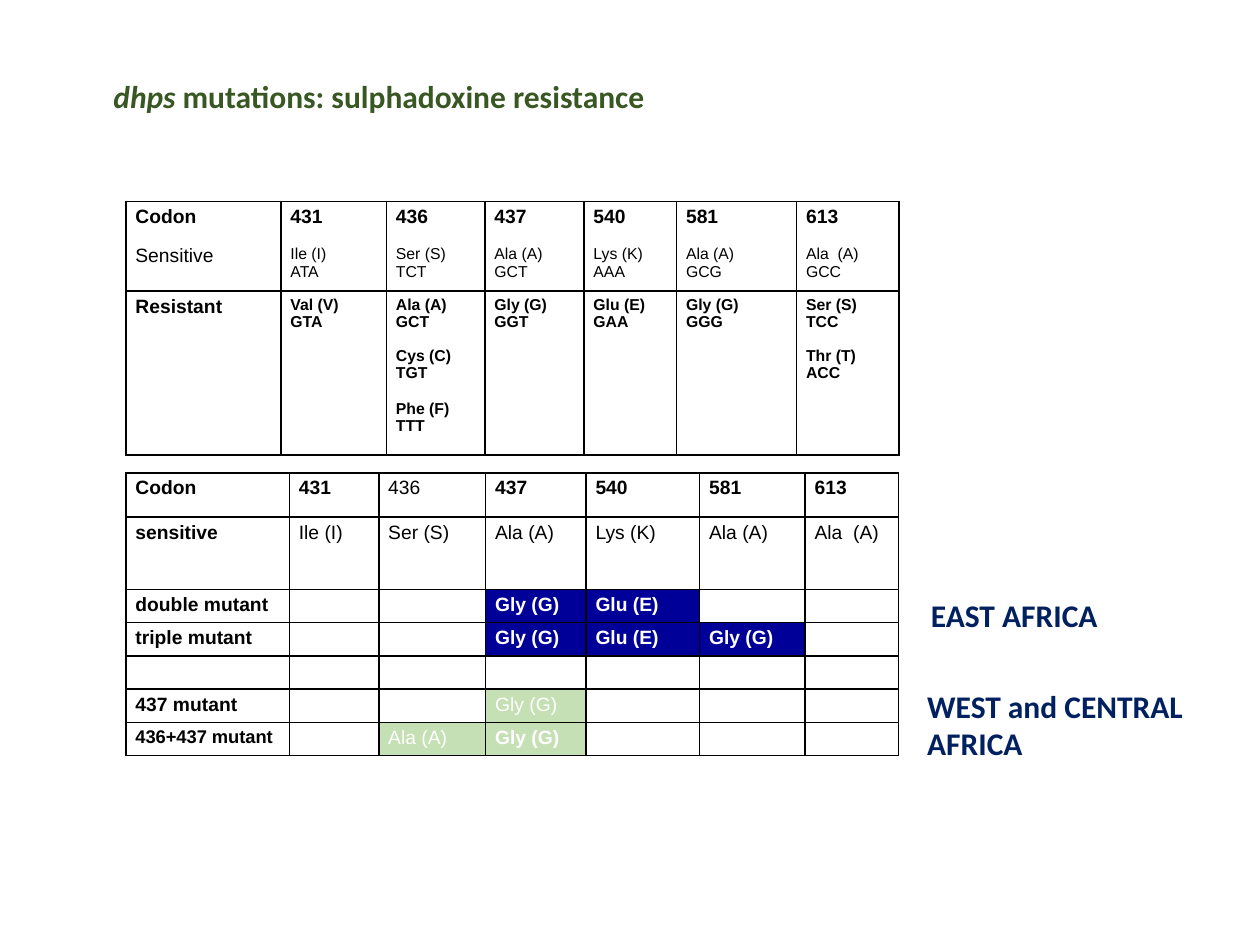
from dataclasses import dataclass

from lxml import etree
from pptx import Presentation
from pptx.dml.color import RGBColor
from pptx.enum.text import MSO_ANCHOR, MSO_AUTO_SIZE, PP_ALIGN
from pptx.oxml.ns import qn
from pptx.util import Pt

TOP = MSO_ANCHOR.TOP
LEFT = PP_ALIGN.LEFT
NO_FIT = MSO_AUTO_SIZE.NONE
TITLE_ONLY = 5


@dataclass(frozen=True)
class Theme:
    heading_font: str = "Calibri"
    table_font: str = "Arial"
    heading_size: float = 18
    table_size: float = 11
    narrow_size: float = 10.5
    codon_size: float = 9
    black: str = "000000"
    white: str = "FFFFFF"
    title: str = "385723"
    region: str = "002060"
    east: str = "000099"
    west: str = "C5E0B4"


THEME = Theme()


@dataclass(frozen=True)
class Line:
    text: str
    size: float = THEME.table_size
    bold: bool = False
    gap: float = 0


@dataclass(frozen=True)
class Cell:
    lines: tuple = ()
    fill: str = THEME.white
    color: str = THEME.black


class SlideBuilder:
    def __init__(self, slide, theme):
        self.slide = slide
        self.theme = theme

    def add_run(self, para, text, font, size, color, bold, italic=False):
        span = para.add_run()
        span.text = text
        span.font.name = font
        span.font.size = Pt(size)
        span.font.color.rgb = RGBColor.from_string(color)
        span.font.bold = bold
        span.font.italic = italic

    def prepare_frame(self, frame):
        frame.word_wrap = True
        frame.auto_size = NO_FIT
        frame.vertical_anchor = TOP

    def title(self, left, top, width, height, parts):
        box = self.slide.shapes.title
        box.left, box.top, box.width, box.height = map(Pt, (left, top, width, height))
        self.prepare_frame(box.text_frame)
        para = box.text_frame.paragraphs[0]
        para.alignment = LEFT
        for text, italic in parts:
            self.add_run(para, text, self.theme.heading_font, self.theme.heading_size,
                         self.theme.title, True, italic)

    def region(self, left, top, width, height, lines):
        box = self.slide.shapes.add_textbox(*map(Pt, (left, top, width, height)))
        frame = box.text_frame
        self.prepare_frame(frame)
        for index, text in enumerate(lines):
            para = frame.add_paragraph() if index else frame.paragraphs[0]
            self.add_run(para, text, self.theme.heading_font, self.theme.heading_size,
                         self.theme.region, True)

    def table(self, left, top, widths, heights, rows):
        frame = self.slide.shapes.add_table(
            len(heights), len(widths),
            *map(Pt, (left, top, sum(widths), sum(heights))))
        table = frame.table
        table.first_row = False
        table.horz_banding = False
        for column, width in zip(table.columns, widths):
            column.width = Pt(width)
        for row, height in zip(table.rows, heights):
            row.height = Pt(height)
        for row, contents in zip(table.rows, rows):
            for cell, content in zip(row.cells, contents):
                self.fill_cell(cell, content)

    def fill_cell(self, cell, content):
        cell.margin_left = cell.margin_right = Pt(5.4)
        cell.margin_top = cell.margin_bottom = Pt(2.7)
        cell.vertical_anchor = TOP
        self.add_borders(cell)
        cell.fill.solid()
        cell.fill.fore_color.rgb = RGBColor.from_string(content.fill)
        frame = cell.text_frame
        for index, line in enumerate(content.lines):
            para = frame.add_paragraph() if index else frame.paragraphs[0]
            para.space_before = Pt(line.gap)
            self.add_run(para, line.text, self.theme.table_font, line.size,
                         content.color, line.bold)
        if not content.lines:
            end = etree.SubElement(frame.paragraphs[0]._p, qn("a:endParaRPr"))
            end.set("sz", str(self.theme.table_size * 100))

    def add_borders(self, cell):
        properties = cell._tc.get_or_add_tcPr()
        for side in ("a:lnL", "a:lnR", "a:lnT", "a:lnB"):
            border = etree.SubElement(properties, qn(side), w=str(Pt(1)))
            fill = etree.SubElement(border, qn("a:solidFill"))
            etree.SubElement(fill, qn("a:srgbClr"), val=self.theme.black)


def label(text, bold=True, size=THEME.table_size):
    return Cell((Line(text, size, bold),))


def mutant(text, fill, bold=True):
    return Cell((Line(text, bold=bold),), fill, THEME.white)


def sensitive_cell(codon, amino, bases):
    return Cell((Line(codon, bold=True), Line(amino, THEME.codon_size, gap=10),
                 Line(bases, THEME.codon_size)))


def resistant_cell(variants):
    lines = []
    for (amino, bases), gap in zip(variants, (0, 9, 10)):
        lines += [Line(amino, THEME.codon_size, True, gap),
                  Line(bases, THEME.codon_size, True)]
    return Cell(tuple(lines))


def mutant_row(name, changes, size=THEME.table_size):
    return [label(name, size=size)] + [changes.get(codon, Cell()) for codon in CODONS]


CODONS = ("431", "436", "437", "540", "581", "613")
AMINOS = ("Ile (I)", "Ser (S)", "Ala (A)", "Lys (K)", "Ala (A)", "Ala  (A)")
BASES = ("ATA", "TCT", "GCT", "AAA", "GCG", "GCC")
VARIANTS = (
    [("Val (V)", "GTA")],
    [("Ala (A)", "GCT"), ("Cys (C)", "TGT"), ("Phe (F)", "TTT")],
    [("Gly (G)", "GGT")],
    [("Glu (E)", "GAA")],
    [("Gly (G)", "GGG")],
    [("Ser (S)", "TCC"), ("Thr (T)", "ACC")],
)


def main():
    deck = Presentation()
    deck.slide_width, deck.slide_height = Pt(720), Pt(540)
    page = SlideBuilder(deck.slides.add_slide(deck.slide_layouts[TITLE_ONLY]), THEME)

    page.title(57.6, 40.3, 373, 28.8,
               [("dhps", True), (" mutations: sulphadoxine resistance", False)])

    codon_head = Cell((Line("Codon", bold=True), Line("Sensitive", gap=10)))
    page.table(72, 115.2, (88.6, 60.3, 56.3, 56.6, 52.9, 68.6, 58.6), (51.2, 93.5), [
        [codon_head] + [sensitive_cell(*parts) for parts in zip(CODONS, AMINOS, BASES)],
        [label("Resistant")] + [resistant_cell(variants) for variants in VARIANTS],
    ])

    double = {"437": mutant("Gly (G)", THEME.east), "540": mutant("Glu (E)", THEME.east)}
    triple = {**double, "581": mutant("Gly (G)", THEME.east)}
    single = {"437": mutant("Gly (G)", THEME.west, False)}
    paired = {"436": mutant("Ala (A)", THEME.west, False),
              "437": mutant("Gly (G)", THEME.west)}
    page.table(72, 270.2, (93.4, 51.1, 61.1, 57.4, 64.9, 60.3, 53.4),
               [25.2, 41.4] + [18.6] * 5, [
        [label("Codon")] + [label(codon, codon != "436") for codon in CODONS],
        [label("sensitive")] + [label(amino, False) for amino in AMINOS],
        mutant_row("double mutant", double),
        mutant_row("triple mutant", triple),
        [Cell()] * 7,
        mutant_row("437 mutant", single),
        mutant_row("436+437 mutant", paired, THEME.narrow_size),
    ])

    page.region(524.9, 337, 134.6, 26.6, ["EAST AFRICA"])
    page.region(522.7, 388.8, 193.7, 46.1, ["WEST and CENTRAL", "AFRICA"])
    deck.save("out.pptx")


if __name__ == "__main__":
    main()
